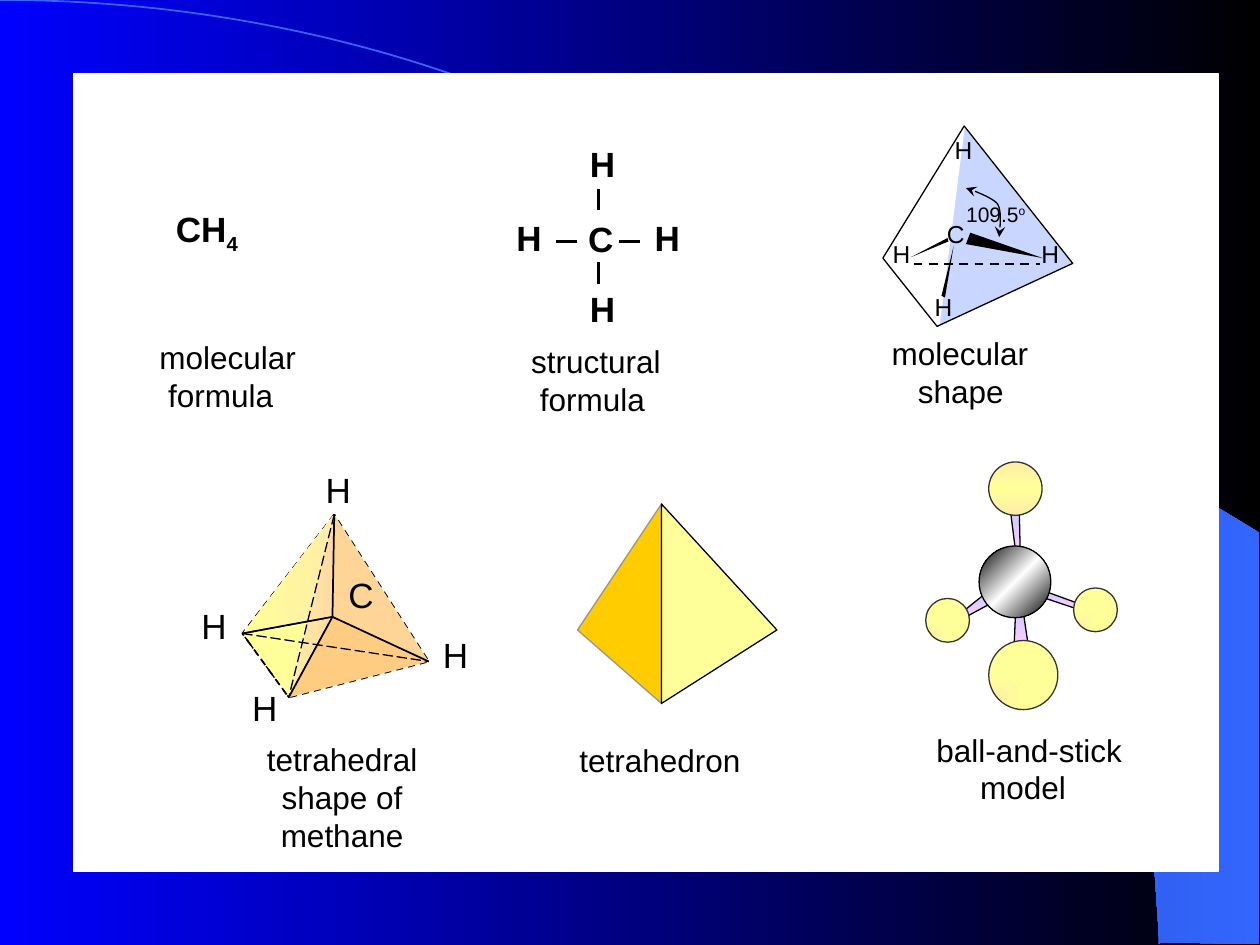
"""Build a slide showing six ways to represent methane."""
from lxml import etree
from pptx import Presentation
from pptx import util as u
from pptx.dml.color import RGBColor
from pptx.enum import dml, shapes, text
from pptx.oxml import ns

BLACK = RGBColor(0, 0, 0)
WHITE = RGBColor(255, 255, 255)
BLUE = RGBColor(0, 0, 255)
ARC_BLUE = RGBColor(0x33, 0x66, 0xFF)
DEEP_BLUE = RGBColor(0x24, 0x49, 0xB6)
PALE_BLUE = RGBColor(0xC9, 0xD6, 0xFF)
GREY = RGBColor(0x96, 0x96, 0x96)
CHARCOAL = RGBColor(0x33, 0x33, 0x33)
GOLD = RGBColor(0xFF, 0xCC, 0)
YELLOW = RGBColor(0xFF, 0xFF, 0x99)
CREAM = RGBColor(0xFF, 0xEE, 0xA7)
PEACH = RGBColor(0xFF, 0xDA, 0xA3)
APRICOT = RGBColor(0xFF, 0xD5, 0x97)
ORANGE = RGBColor(0xFF, 0xCC, 0x81)
LILAC = RGBColor(0xCC, 0xCC, 0xFF)
PINK = RGBColor(0xFF, 0xCC, 0xFF)

DASH, LONG = dml.MSO_LINE.DASH, dml.MSO_LINE.LONG_DASH
STICK = ((LILAC, PINK), 90)
CARBON = ((BLACK, WHITE, BLACK), 45)
HYDROGEN = ((CREAM, YELLOW), None)
TOP_HYDROGEN = ((CREAM, YELLOW, CREAM), 90)

SWEEP = [(662.5, 538.5), (719.5, 539.5), (719.5, 304.5), (424, 124.5),
         (449.5, 143.5), (470, 160), (493, 180), (515.5, 201.5),
         (548.5, 237.5), (578, 276.5), (599, 310.5), (618, 345),
         (632, 380), (643, 412), (650, 438.5), (657.5, 472.5), (660, 501)]
ARC = [[(0, 0), (366, 0), (662.5, 241), (662.5, 539.5)]]
ANGLE = [[(552, 107.5), (555, 108.5), (566.5, 112.5), (570, 116.5)],
         [(570, 116.5), (573, 121.5), (571, 132), (571, 135.5)]]
PANEL = (42, 42, 654, 456)

METHANE = {"t": (191, 294), "l": (138.5, 362), "f": (165, 398.5),
           "r": (245, 378), "c": (190, 352.5), "m": (175.5, 355.5)}
SOLID = {"t": (378, 288), "l": (330, 360), "b": (378, 402), "r": (444, 360)}


def corners(vertices, names):
    return [vertices[n] for n in names]


FACES = [
    ([(551, 72), (536.5, 186.5), (613, 150.5)], PALE_BLUE, WHITE, 0.75, None),
    ([(554.5, 133), (596, 147.5), (552, 139.5)], BLACK, None, 0, None),
    ([(545, 140.5), (538, 169), (540, 170)], BLACK, None, 0, None),
    ([(520.5, 147), (541.5, 136), (542, 138)], BLACK, None, 0, None),
    ([(551, 72), (504.5, 147.5), (535.5, 186.5), (613, 150.5)], None, BLACK, 0.75, None),
    (corners(SOLID, "tlb"), GOLD, GREY, 0.75, None),
    (corners(SOLID, "tbr"), YELLOW, BLACK, 0.75, None),
    ([(584.5, 348), (587.5, 368), (579.5, 370), (580.5, 347)], STICK, BLACK, 0.75, None),
    ([(551.5, 348.5), (561.5, 340.5), (565, 345.5), (553, 352)], STICK, BLACK, 0.75, None),
    ([(580.5, 316), (577.5, 292.5), (582.5, 291.5), (583, 316)], STICK, BLACK, 0.75, None),
    ([(596, 337.5), (616.5, 345), (615.5, 348), (596, 341.5)], STICK, BLACK, 0.75, None),
    (corners(METHANE, "mlf"), YELLOW, WHITE, 0.75, None),
    (corners(METHANE, "fct"), ((CREAM, PEACH), 0), None, 0, None),
    (corners(METHANE, "tlfr"), None, BLACK, 1, DASH),
    (corners(METHANE, "lmt"), ((YELLOW, CREAM), 0), None, 0, None),
    (corners(METHANE, "lcf"), None, BLACK, 0.75, DASH),
    (corners(METHANE, "tcr"), APRICOT, None, 0, None),
    (corners(METHANE, "crf"), ORANGE, None, 0, None),
]
BONDS = [((318, 138), (330, 138)), ((354, 138), (366, 138)),
         ((342, 120), (342, 108)), ((342, 162), (342, 150))]
LINES = [(b, 1.5, None) for b in BONDS]
LINES += [(((522, 151), (594, 151)), 1.25, DASH)]
LINES += [(corners(METHANE, e), 0.75, LONG) for e in ("tf", "lr")]
LINES += [(corners(METHANE, e), 1, None) for e in ("ct", "cf", "cl", "cr")]
BALLS = [(559.5, 312, 41, CARBON, BLACK), (613.5, 336, 25, HYDROGEN, CHARCOAL),
         (565, 264, 30.5, TOP_HYDROGEN, CHARCOAL),
         (529, 342, 25, HYDROGEN, CHARCOAL), (565, 366, 39.5, HYDROGEN, CHARCOAL)]

ATOMS = [
    (20, True, 29, [("C", 329, 121), ("H", 330, 160.5), ("H", 330, 78),
                    ("H", 367, 120), ("H", 288, 120)]),
    (14, False, 24.5, [("H", 538.5, 73.5), ("H", 588, 133), ("H", 527, 163.5),
                       ("H", 503, 133), ("C", 534, 121.5)]),
    (20, False, 29, [("C", 192, 324), ("H", 108, 342), ("H", 246, 358.5),
                     ("H", 179, 264), ("H", 137, 389)]),
]
SCRIPTS = [("CH", "4", -25, 93.5, 115, 50.5, 20, True),
           ("109.5", "o", 30, 545, 111.5, 49, 12, False)]
CAPTIONS = [
    (["molecular", "formula"], 84, 189.5, 100, 5),
    (["structural", "formula"], 296.5, 192, 100, 5),
    (["molecular", "shape"], 502.5, 187.5, 100, 15),
    (["ball-and-stick", "model"], 528, 414, 128, 25),
    (["tetrahedron"], 324, 420, 106.5, 0),
    (["tetrahedral", "shape of", "methane"], 145, 419.5, 101, None),
]

prs = Presentation()
prs.slide_width, prs.slide_height = u.Pt(720), u.Pt(540)
s = prs.slides.add_slide(prs.slide_layouts[6])


def add_xml(parent, tag, **attrs):
    return etree.SubElement(parent, ns.qn(tag), attrs)


def gradient(owner, fill, colors, angle):
    fill.gradient()
    g = next(owner.element.iter(ns.qn("a:gradFill")))
    for child in list(g):
        g.remove(child)
    stops = add_xml(g, "a:gsLst")
    for i, color in enumerate(colors):
        stop = add_xml(stops, "a:gs", pos=str(100000 * i // (len(colors) - 1)))
        add_xml(stop, "a:srgbClr", val=str(color))
    if angle is None:
        add_xml(add_xml(g, "a:path", path="rect"), "a:fillToRect", t="100000", r="100000")
    else:
        add_xml(g, "a:lin", ang=str(angle * 60000), scaled="0")


def stroke(line, color, width, dash=None):
    if color is None:
        line.fill.background()
        return
    line.color.rgb = color
    for k, v in {"width": u.Pt(width), "dash_style": dash}.items():
        setattr(line, k, v)


def style(sp, fill, color, width=0.75, dash=None):
    sp.shadow.inherit = False
    if fill is None:
        sp.fill.background()
    elif isinstance(fill, RGBColor):
        sp.fill.solid()
        sp.fill.fore_color.rgb = fill
    else:
        gradient(sp, sp.fill, *fill)
    stroke(sp.line, color, width, dash)
    return sp


def outline(points, *look, close=True):
    pts = [(u.Pt(x), u.Pt(y)) for x, y in points]
    b = s.shapes.build_freeform(*pts[0], scale=1.0)
    b.add_line_segments(pts[1:], close=close)
    return style(b.convert_to_shape(), *look)


def curve(beziers, *look, steps=80):
    pts = []
    for a, b, c, d in beziers:
        for t in (i / steps for i in range(steps + 1)):
            w = ((1 - t) ** 3, 3 * t * (1 - t) ** 2, 3 * t * t * (1 - t), t ** 3)
            pts.append([sum(k * q[n] for k, q in zip(w, (a, b, c, d))) for n in (0, 1)])
    return outline(pts, *look, close=False)


def preset(kind, box, *look):
    return style(s.shapes.add_shape(kind, *map(u.Pt, box)), *look)


def label(rows, left, top, width, size, bold=False, indent=0):
    height = len(rows) * size * 1.2 + 7.2
    tf = s.shapes.add_textbox(*map(u.Pt, (left, top, width, height))).text_frame
    tf.word_wrap, tf.auto_size = bool(indent), text.MSO_AUTO_SIZE.SHAPE_TO_FIT_TEXT
    for i, row in enumerate(rows):
        p = tf.add_paragraph() if i else tf.paragraphs[0]
        if indent is None:
            p.alignment = text.PP_ALIGN.CENTER
        elif i and indent:
            p._p.get_or_add_pPr().set("marL", str(u.Pt(indent)))
        for content, shift in row:
            r = p.add_run()
            r.text = content
            for k, v in {"name": "Arial", "size": u.Pt(size), "bold": bold}.items():
                setattr(r.font, k, v)
            r.font.color.rgb = BLACK
            if shift:
                r._r.get_or_add_rPr().set("baseline", str(shift * 1000))


gradient(s, s.background.fill, (BLUE, BLACK), 0)
outline(SWEEP, ((DEEP_BLUE, ARC_BLUE), 0), None)
curve(ARC, None, ARC_BLUE, 1)
preset(shapes.MSO_SHAPE.RECTANGLE, PANEL, WHITE, WHITE)
for face in FACES:
    outline(*face)
for (start, end), width, dash in LINES:
    c = s.shapes.add_connector(shapes.MSO_CONNECTOR.STRAIGHT, *map(u.Pt, (*start, *end)))
    stroke(c.line, BLACK, width, dash)
    add_xml(c.element.spPr, "a:effectLst")
for x, y, d, fill, color in BALLS:
    preset(shapes.MSO_SHAPE.OVAL, (x, y, d, d), fill, color)
for size, bold, width, atoms in ATOMS:
    for symbol, x, y in atoms:
        label([[(symbol, 0)]], x, y, width, size, bold)
for base, script, shift, x, y, width, size, bold in SCRIPTS:
    label([[(base, 0), (script, shift)]], x, y, width, size, bold)
for words, x, y, width, indent in CAPTIONS:
    label([[(w, 0)] for w in words], x, y, width, 18, indent=indent)
arrow = curve(ANGLE, None, BLACK).line._get_or_add_ln()
for end in ("a:headEnd", "a:tailEnd"):
    add_xml(arrow, end, type="stealth")

prs.save("out.pptx")
